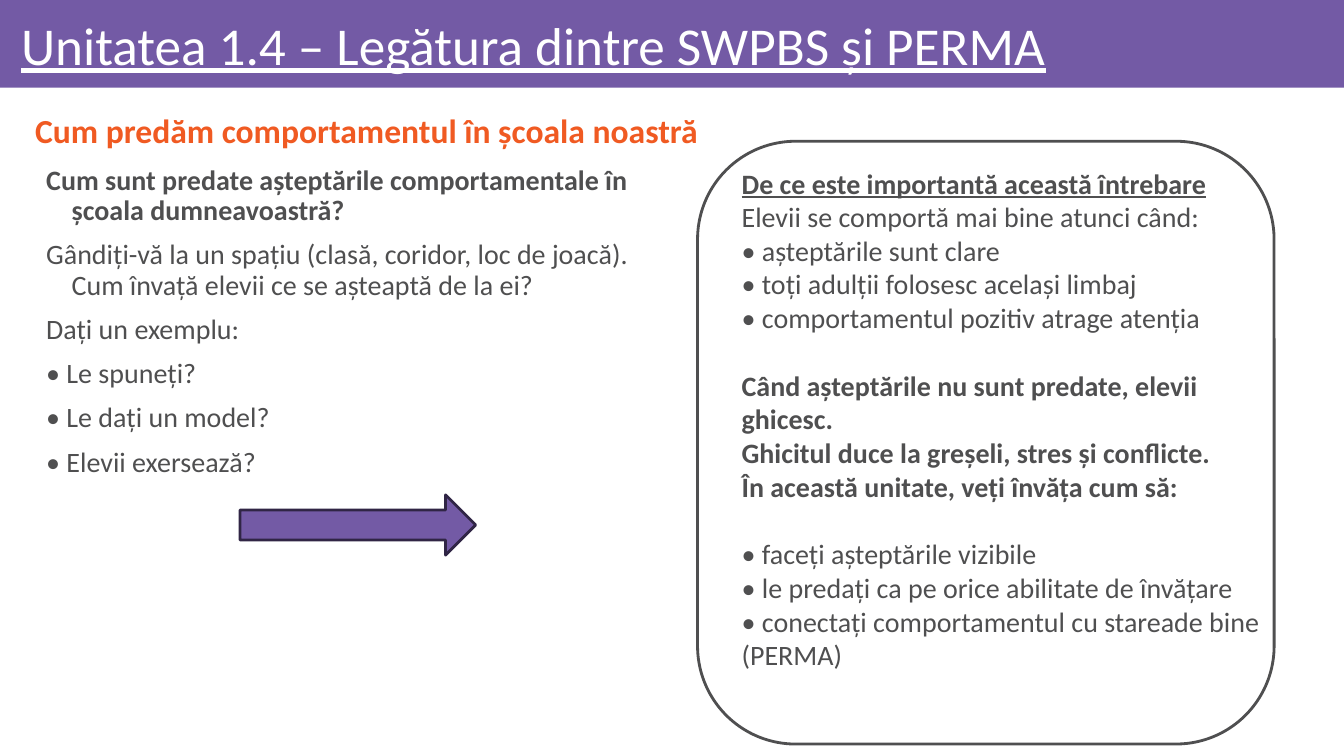
"""Build the slide on how school behaviour is taught, linking SWPBS and PERMA."""
import pptx
import pptx.util
import pptx.dml.color
import pptx.enum.shapes
import pptx.enum.text
import pptx.oxml

Cm, Pt = pptx.util.Cm, pptx.util.Pt
SHAPE = pptx.enum.shapes.MSO_SHAPE
ALIGN = pptx.enum.text.PP_ALIGN
ANCHOR = pptx.enum.text.MSO_ANCHOR
AUTO = pptx.enum.text.MSO_AUTO_SIZE

PURPLE, DARK_PURPLE, ORANGE = "735AA5", "302545", "F05A22"
GREY, WHITE = "4F4F50", "FFFFFF"


def rgb(value):
    return pptx.dml.color.RGBColor.from_string(value)


def apply(target, values):
    for name, value in values.items():
        setattr(target, name, value)


class Deck:
    font = "Calibri"
    item = {"line_spacing": 0.9, "space_before": Pt(10)}

    def __init__(self, width, height):
        self.prs = pptx.Presentation()
        apply(self.prs, {"slide_width": Cm(width), "slide_height": Cm(height)})

    def add_slide(self, layout):
        self.slide = self.prs.slides.add_slide(self.prs.slide_layouts[layout])

    def shape(self, kind, box, fill=None, line=None, adjust=()):
        sp = self.slide.shapes.add_shape(kind, *map(Cm, box))
        sp.shadow.inherit = False
        for i, value in enumerate(adjust):
            sp.adjustments[i] = value
        if fill:
            sp.fill.solid()
            sp.fill.fore_color.rgb = rgb(fill)
        else:
            sp.fill.background()
        if line:
            sp.line.color.rgb = rgb(line)
            sp.line.width = Pt(2)
        else:
            sp.line.fill.background()
        return sp

    def band(self, box, fill):
        sp = self.shape(SHAPE.RECTANGLE, box, fill)
        self.slide.shapes._spTree.insert(2, sp._element)

    def paragraphs(self, tf, lines, size, color, para):
        for i, (text, style) in enumerate(lines):
            p = tf.paragraphs[0] if i == 0 else tf.add_paragraph()
            apply(p, para)
            style = dict(style)
            if "space_before" in style:
                p.space_before = style.pop("space_before")
            r = p.add_run()
            r.text = text
            font = {"name": self.font, "size": Pt(size), "bold": False}
            apply(r.font, {**font, **style})
            r.font.color.rgb = rgb(color)

    def placeholder(self, index, box, lines, size, color, frame, para):
        sp = self.slide.placeholders[index]
        apply(sp, dict(zip(("left", "top", "width", "height"), map(Cm, box))))
        tf = sp.text_frame
        apply(tf, {"word_wrap": True, "auto_size": AUTO.NONE, **frame})
        self.paragraphs(tf, lines, size, color, {**self.item, **para})
        return tf

    def title(self, box, text):
        frame = {"vertical_anchor": ANCHOR.MIDDLE, "margin_left": Cm(0.25),
                 "margin_right": Cm(0.15), "margin_top": Cm(0.15), "margin_bottom": Cm(0.15)}
        self.placeholder(0, box, [(text, {"underline": True})], 38, WHITE, frame,
                         {"alignment": ALIGN.LEFT, "space_before": Pt(0)})

    def body(self, index, box, lines, size, color, anchor, align):
        tf = self.placeholder(index, box, lines, size, color,
                              {"vertical_anchor": anchor}, {"alignment": align})
        for p in tf.paragraphs:
            pPr = p._p.get_or_add_pPr()
            pPr.set("marL", str(Cm(1.27)))
            pPr.set("indent", str(-Cm(0.64)))
            pPr.append(pptx.oxml.parse_xml(
                '<a:buNone xmlns:a="http://schemas.openxmlformats.org/drawingml/2006/main"/>'))

    def text(self, box, lines, size, color):
        tf = self.slide.shapes.add_textbox(*map(Cm, box)).text_frame
        apply(tf, {"word_wrap": True, "auto_size": AUTO.SHAPE_TO_FIT_TEXT})
        self.paragraphs(tf, lines, size, color, {})


BOLD = {"bold": True}
GAP = {"space_before": Pt(24.4)}

QUESTIONS = [
    ("Cum sunt predate așteptările comportamentale în școala dumneavoastră?", BOLD),
    ("Gândiți-vă la un spațiu (clasă, coridor, loc de joacă). "
     "Cum învață elevii ce se așteaptă de la ei?", {}),
    ("Dați un exemplu:", {}),
    ("• Le spuneți?", {}),
    ("• Le dați un model?", {}),
    ("• Elevii exersează?", {}),
]

REASONS = [
    ("De ce este importantă această întrebare", {**BOLD, "underline": True}),
    ("Elevii se comportă mai bine atunci când:", {}),
    ("• așteptările sunt clare", {}),
    ("• toți adulții folosesc același limbaj", {}),
    ("• comportamentul pozitiv atrage atenția", {}),
    ("Când așteptările nu sunt predate, elevii ghicesc.", {**BOLD, **GAP}),
    ("Ghicitul duce la greșeli, stres și conflicte.", BOLD),
    ("În această unitate, veți învăța cum să:", BOLD),
    ("• faceți așteptările vizibile", GAP),
    ("• le predați ca pe orice abilitate de învățare", {}),
    ("• conectați comportamentul cu stareade bine (PERMA)", {}),
]


def main():
    deck = Deck(33.87, 19.05)
    deck.add_slide(3)
    deck.band((0, 0, 33.87, 2.21), PURPLE)
    deck.title((0.28, 0.23, 33.17, 1.98), "Unitatea 1.4 – Legătura dintre SWPBS și PERMA")
    deck.body(1, (0, 2.57, 33.17, 1.52), [("Cum predăm comportamentul în școala noastră", BOLD)],
              24, ORANGE, ANCHOR.MIDDLE, ALIGN.JUSTIFY)
    deck.body(2, (0.28, 4.06, 17.04, 14.68), QUESTIONS, 20, GREY, ANCHOR.TOP, ALIGN.LEFT)
    deck.shape(SHAPE.ROUNDED_RECTANGLE, (17.58, 3.56, 14.53, 15.19), line=GREY, adjust=[0.17])
    deck.text((18.44, 4.06, 13.67, 13.08), REASONS, 20, GREY)
    deck.shape(SHAPE.RIGHT_ARROW, (6.05, 12.47, 5.94, 1.52), PURPLE, DARK_PURPLE, [0.5, 0.5])
    deck.prs.save("out.pptx")


if __name__ == "__main__":
    main()
